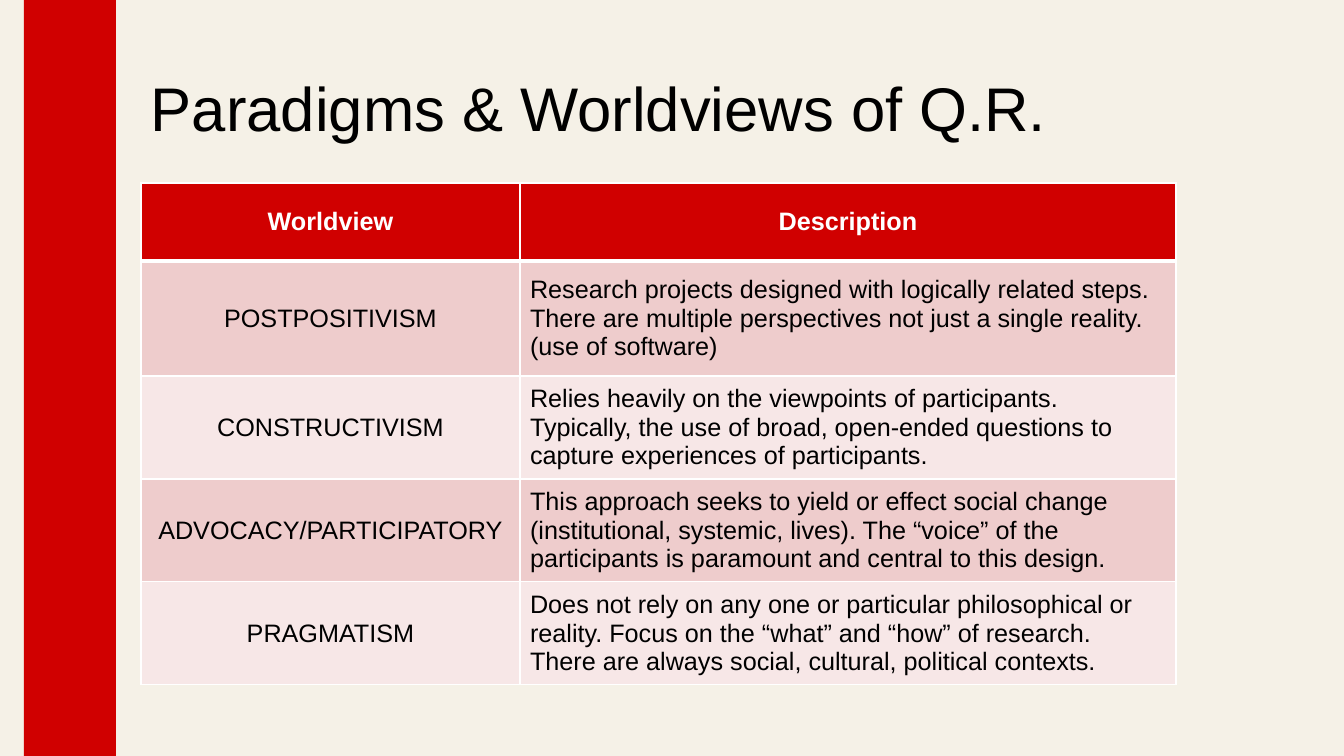
import pptx
import pptx.dml.color
import pptx.enum.shapes
import pptx.enum.text
import pptx.oxml
import pptx.oxml.ns
import pptx.util

PX = 914400 / 100.8
WHITE, BLACK, RED = "FFFFFF", "000000", "D00000"
CREAM, ROSE, BLUSH = "F5F1E7", "EECCCC", "F7E7E7"
MIDDLE = pptx.enum.text.MSO_ANCHOR.MIDDLE
ALIGN = pptx.enum.text.PP_ALIGN


def paint(fill, color):
    fill.solid()
    fill.fore_color.rgb = pptx.dml.color.RGBColor.from_string(color)


def write(para, text, size, color, bold=False):
    run = para.add_run()
    run.text = text
    run.font.name = "Arial"
    run.font.size = pptx.util.Pt(size)
    run.font.bold = bold
    paint(run.font.fill, color)


deck = pptx.Presentation()
deck.slide_width, deck.slide_height = round(1344 * PX), round(756 * PX)
slide = deck.slides.add_slide(deck.slide_layouts[6])
paint(slide.background.fill, CREAM)

box = [round(n * PX) for n in (24, 0, 92, 756)]
band = slide.shapes.add_shape(pptx.enum.shapes.MSO_SHAPE.RECTANGLE, *box)
band.shadow.inherit = False
paint(band.fill, RED)
band.line.fill.background()

box = [round(n * PX) for n in (141, 40, 1111, 143)]
title = slide.shapes.add_textbox(*box).text_frame
title.word_wrap = True
title.vertical_anchor = MIDDLE
title.paragraphs[0].line_spacing = 0.9
write(title.paragraphs[0], "Paradigms & Worldviews of Q.R.", 44, BLACK)

rows = [
    ("Worldview", ["Description"]),
    ("POSTPOSITIVISM", [
        "Research projects designed with logically related steps. "
        "There are multiple perspectives not just a single reality.",
        "(use of software)"]),
    ("CONSTRUCTIVISM", [
        "Relies heavily on the viewpoints of participants. Typically, the use of "
        "broad, open-ended questions to capture experiences of participants."]),
    ("ADVOCACY/PARTICIPATORY", [
        "This approach seeks to yield or effect social change (institutional, "
        "systemic, lives). The “voice” of the participants is paramount and "
        "central to this design."]),
    ("PRAGMATISM", [
        "Does not rely on any one or particular philosophical or reality. "
        "Focus on the “what” and “how” of research.",
        "There are always social, cultural, political contexts."]),
]
widths = [379, 656]
heights = [78, 115, 103, 103, 103]
box = [round(n * PX) for n in (141, 183, sum(widths), sum(heights))]
table = slide.shapes.add_table(len(rows), len(widths), *box).table
for col, width in zip(table.columns, widths):
    col.width = round(width * PX)

for i, (view, about) in enumerate(rows):
    table.rows[i].height = round(heights[i] * PX)
    head = i == 0
    shade = RED if head else (BLUSH, ROSE)[i % 2]
    for j, lines in enumerate([[view], about]):
        cell = table.cell(i, j)
        cell.vertical_anchor = MIDDLE
        props = cell._tc.get_or_add_tcPr()
        for side in "LRTB":
            thick = (side == "B" and i == 0) or (side == "T" and i == 1)
            props.append(pptx.oxml.parse_xml(
                f'<a:ln{side} {pptx.oxml.ns.nsdecls("a")} w="{38100 if thick else 12700}">'
                f'<a:solidFill><a:srgbClr val="{WHITE}"/></a:solidFill></a:ln{side}>'))
        paint(cell.fill, shade)
        frame = cell.text_frame
        for k, line in enumerate(lines):
            para = frame.add_paragraph() if k else frame.paragraphs[0]
            para.alignment = ALIGN.CENTER if head or j == 0 else ALIGN.LEFT
            write(para, line, 18, WHITE if head else BLACK, head)

deck.save("out.pptx")
